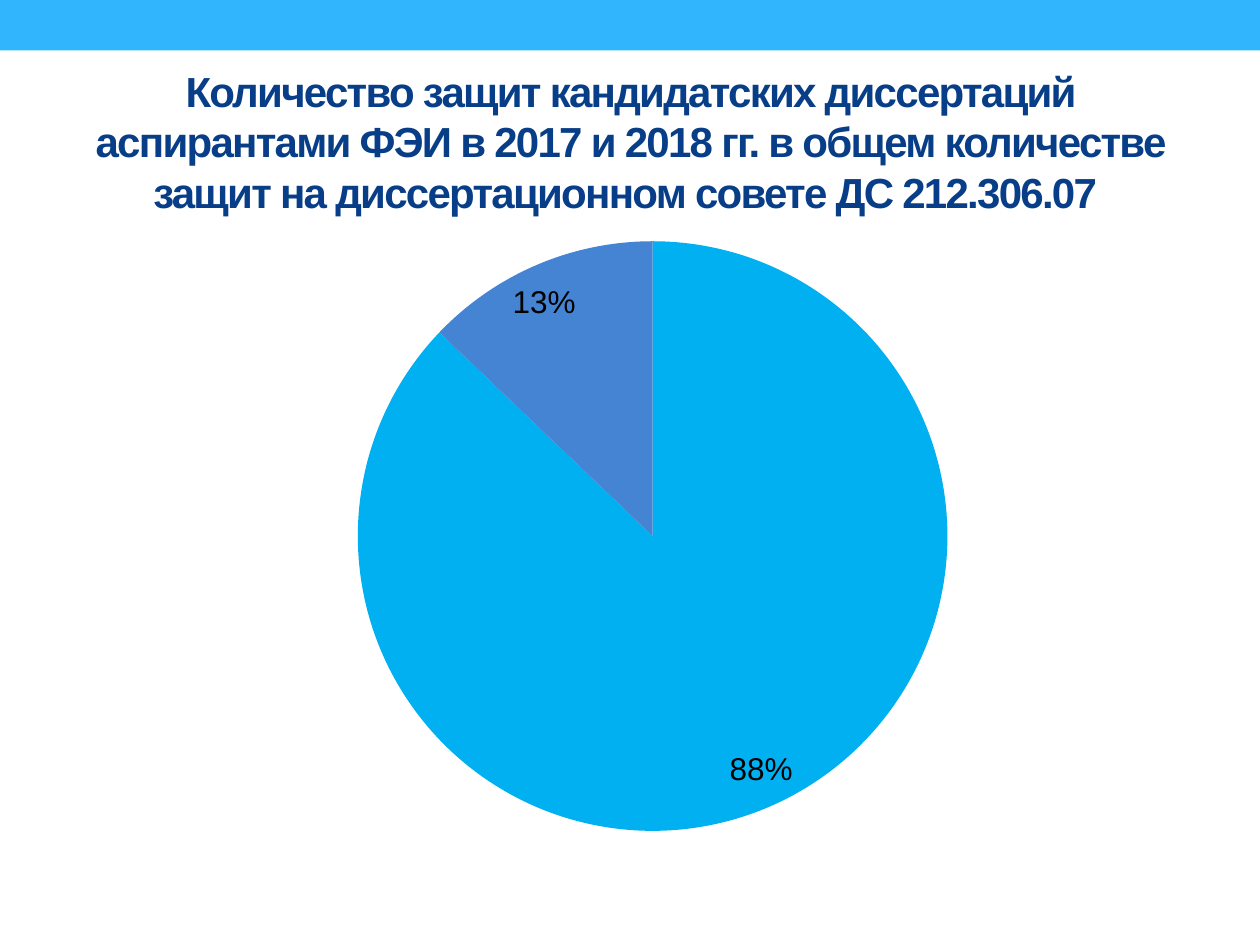
from dataclasses import dataclass

from lxml import etree
from pptx import Presentation
from pptx.chart.data import CategoryChartData
from pptx.dml.color import RGBColor
from pptx.enum.chart import XL_CHART_TYPE, XL_LABEL_POSITION
from pptx.enum.shapes import MSO_SHAPE
from pptx.enum.text import MSO_ANCHOR, PP_ALIGN
from pptx.oxml.ns import qn
from pptx.util import Inches, Pt

PIE = XL_CHART_TYPE.PIE
BEST_FIT = XL_LABEL_POSITION.BEST_FIT
RECTANGLE = MSO_SHAPE.RECTANGLE
MIDDLE = MSO_ANCHOR.MIDDLE
CENTER = PP_ALIGN.CENTER
TITLE_ONLY = 5
FONT = "Arial"
HEADING = (
    "Количество защит кандидатских диссертаций аспирантами ФЭИ "
    "в 2017 и 2018 гг. в общем количестве защит "
    "на диссертационном совете ДС 212.306.07 "
)


@dataclass
class Share:
    category: str
    percent: int
    color: str


SHARES = [Share("1", 88, "00B0F0"), Share("2", 13, "4584D3")]
PLOT_AREA = {"x": 0.26, "y": 0.03, "w": 0.52, "h": 0.88}


def rgb(value: str) -> RGBColor:
    return RGBColor.from_string(value)


def style_font(font, size: int, color: str) -> None:
    font.name = FONT
    font.size = Pt(size)
    font.color.rgb = rgb(color)


def add_top_band(slide) -> None:
    band = slide.shapes.add_shape(RECTANGLE, 0, 0, Inches(10), Inches(0.4))
    band.shadow.inherit = False
    band.fill.solid()
    band.fill.fore_color.rgb = rgb("31B6FD")
    band.line.fill.background()


def set_heading(slide) -> None:
    heading = slide.shapes.title
    heading.left, heading.top = Inches(0.5), Inches(0.58)
    heading.width, heading.height = Inches(9), Inches(1.08)
    frame = heading.text_frame
    frame.text = HEADING
    frame.word_wrap = True
    frame.vertical_anchor = MIDDLE
    paragraph = frame.paragraphs[0]
    paragraph.alignment = CENTER
    run = paragraph.runs[0]
    style_font(run.font, 24, "073E87")
    run.font.bold = True
    run.font._element.set("spc", "-100")


def place_plot(chart) -> None:
    plot_area = chart._chartSpace.chart.plotArea
    for automatic in plot_area.findall(qn("c:layout")):
        plot_area.remove(automatic)
    layout = etree.Element(qn("c:layout"))
    manual = etree.SubElement(layout, qn("c:manualLayout"))
    settings = {"layoutTarget": "inner", "xMode": "edge", "yMode": "edge", **PLOT_AREA}
    for tag, value in settings.items():
        etree.SubElement(manual, qn(f"c:{tag}")).set("val", str(value))
    plot_area.insert(0, layout)


def add_share_pie(slide, shares: list[Share]) -> None:
    defenses = CategoryChartData()
    defenses.categories = [share.category for share in shares]
    defenses.add_series("Series 1", [share.percent for share in shares])
    chart = slide.shapes.add_chart(
        PIE, Inches(0.5), Inches(1.75), Inches(9), Inches(5.33), defenses
    ).chart
    chart.has_title = False
    chart.has_legend = False
    style_font(chart.font, 18, "000000")
    pie = chart.plots[0]
    pie.vary_by_categories = True
    for index, share in enumerate(shares):
        sector = pie.series[0].points[index].format
        sector.fill.solid()
        sector.fill.fore_color.rgb = rgb(share.color)
        sector.line.fill.background()
    pie.has_data_labels = True
    labels = pie.data_labels
    labels.show_percentage = False
    labels.show_value = True
    labels.number_format = '0"%"'
    labels.number_format_is_linked = False
    labels.position = BEST_FIT
    style_font(labels.font, 18, "000000")
    place_plot(chart)


def main() -> None:
    presentation = Presentation()
    presentation.slide_width = Inches(10)
    presentation.slide_height = Inches(7.5)
    slide = presentation.slides.add_slide(presentation.slide_layouts[TITLE_ONLY])
    add_top_band(slide)
    set_heading(slide)
    add_share_pie(slide, SHARES)
    presentation.save("out.pptx")


if __name__ == "__main__":
    main()
